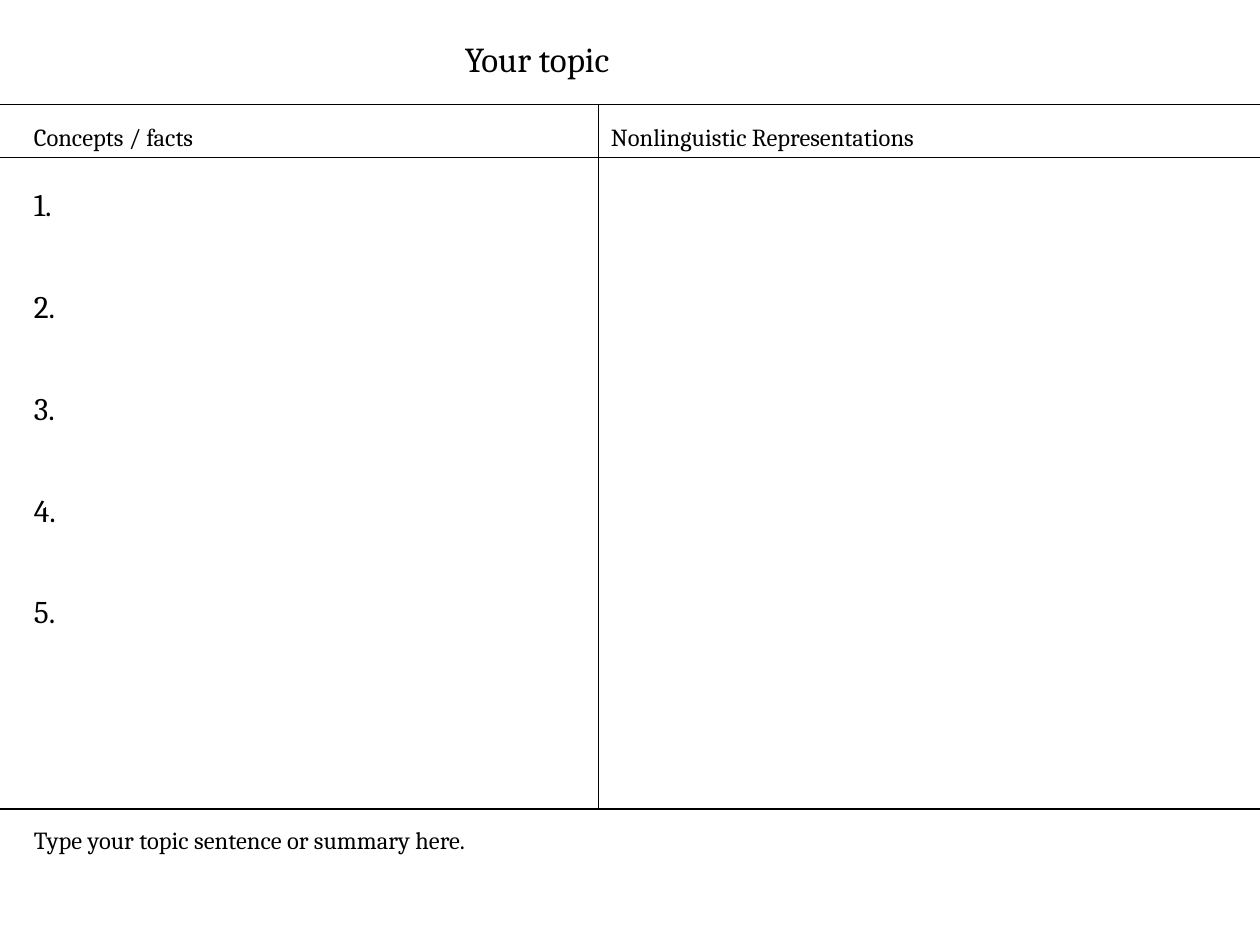
from dataclasses import dataclass

from pptx import Presentation
from pptx.dml.color import RGBColor
from pptx.enum import shapes, text
from pptx.oxml import ns, xmlchemy
from pptx.util import Inches, Pt


@dataclass(frozen=True)
class Theme:
    font: str = "Cambria"
    ink: RGBColor = RGBColor(0, 0, 0)
    paper: RGBColor = RGBColor(255, 255, 255)
    title: int = 20
    item: int = 18
    label: int = 14
    rule: float = 0.75
    item_gap: float = 36.6


theme = Theme()

prs = Presentation()
prs.slide_width, prs.slide_height = Inches(10), Inches(7.5)
s = prs.slides.add_slide(prs.slide_layouts[6])
s.background.fill.solid()
s.background.fill.fore_color.rgb = theme.paper


def add_text(x, y, w, h, lines, size, gap=0.0):
    sp = s.shapes.add_textbox(Inches(x), Inches(y), Inches(w), Inches(h))
    tf = sp.text_frame
    tf.word_wrap = True
    tf.auto_size = text.MSO_AUTO_SIZE.NONE
    for i, line in enumerate(lines):
        p = tf.add_paragraph() if i else tf.paragraphs[0]
        p.space_after = Pt(gap)
        r = p.add_run()
        r.text = line
        r.font.name = theme.font
        r.font.size = Pt(size)
        r.font.color.rgb = theme.ink
    return tf


# Grid positions
left, middle, right = 0, 4.75, 10
top, header_bottom, bottom = 0.83, 1.25, 6.42
margin = 0.17

# Title, set in from the left edge of its box
tf = add_text(1.33, 0.25, 7.08, 0.43, ["Your topic"], theme.title)
tf.margin_left = Inches(2.36)

# Numbered concepts
numbers = [f"{n}." for n in range(1, 6)]
add_text(margin, 1.42, 4.42, 4.91, numbers, theme.item, theme.item_gap)

# Summary
add_text(margin, 6.5, 9.58, 0.78,
         ["Type your topic sentence or summary here."], theme.label)

# Column headings
for x, heading in ((margin, "Concepts / facts"),
                   (middle, "Nonlinguistic Representations")):
    add_text(x, 0.92, 3.67, 0.33, [heading], theme.label)

# Rules: three across, one down between the columns
rules = [(left, y, right, y) for y in (top, header_bottom, bottom)]
rules.append((middle, top, middle, bottom))
for ends in rules:
    sp = s.shapes.add_connector(shapes.MSO_CONNECTOR.STRAIGHT,
                                *(Inches(v) for v in ends))
    sp.line.color.rgb = theme.ink
    sp.line.width = Pt(theme.rule)
    sp._element.spPr.append(xmlchemy.OxmlElement("a:effectLst"))

prs.save("out.pptx")
